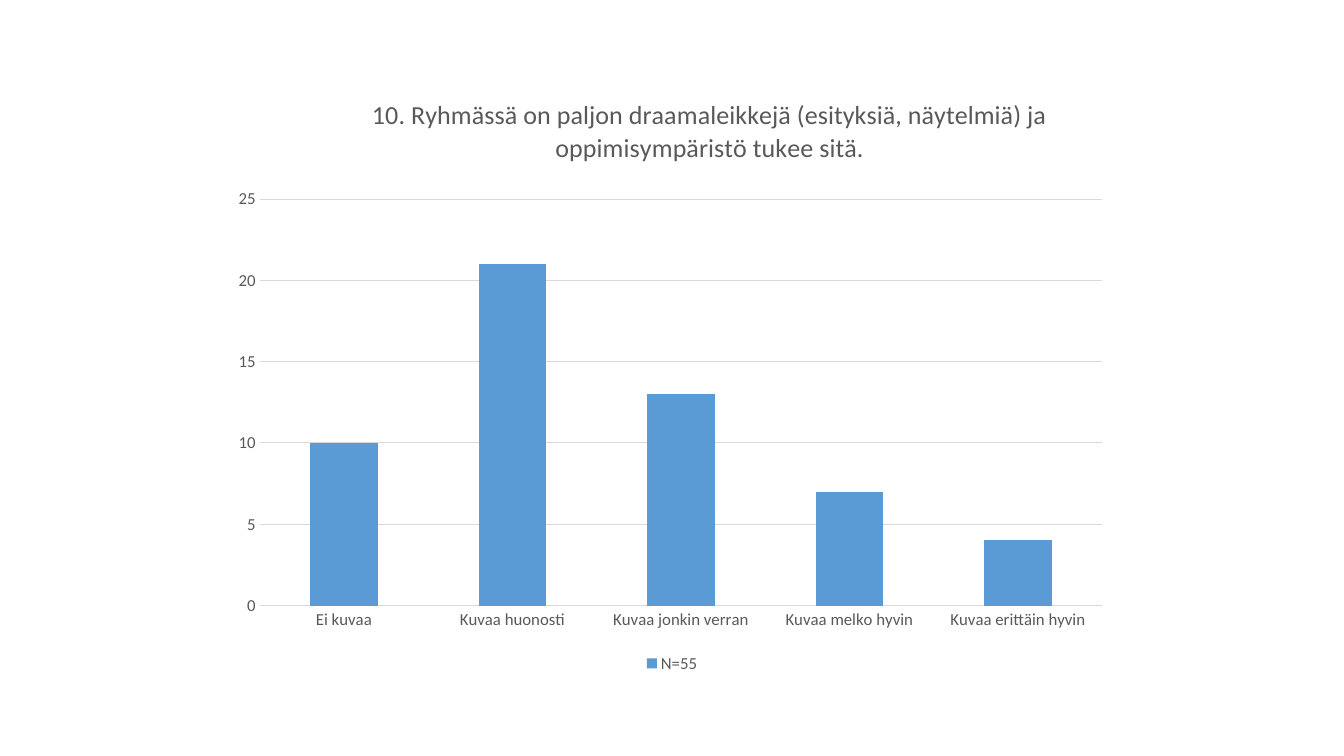
"""Build a slide with one column chart of survey answers."""
from dataclasses import dataclass

from lxml.etree import SubElement
from pptx import Presentation
from pptx.chart.axis import _BaseAxis
from pptx.chart.data import CategoryChartData
from pptx.dml.color import RGBColor
from pptx.dml.line import LineFormat
from pptx.enum.chart import XL_CHART_TYPE, XL_LEGEND_POSITION, XL_TICK_MARK
from pptx.oxml.ns import qn
from pptx.oxml.xmlchemy import BaseOxmlElement
from pptx.text.text import Font
from pptx.util import Inches, Pt

FACE = "Calibri"
GREY = "595959"
RULE = "D9D9D9"
BLUE = "5B9BD5"
TITLE = ("10. Ryhmässä on paljon draamaleikkejä (esityksiä, näytelmiä) ja "
         "oppimisympäristö tukee sitä.")


@dataclass
class Answer:
    label: str
    count: int


ANSWERS = [
    Answer("Ei kuvaa", 10),
    Answer("Kuvaa huonosti", 21),
    Answer("Kuvaa jonkin verran", 13),
    Answer("Kuvaa melko hyvin", 7),
    Answer("Kuvaa erittäin hyvin", 4),
]


def color(code: str) -> RGBColor:
    """Turn a hex string into a colour."""
    return RGBColor.from_string(code)


def style(font: Font, size: float) -> None:
    """Set the face, size and colour of a font."""
    font.name = FACE
    font.size = Pt(size)
    font.bold = False
    font.color.rgb = color(GREY)


def rule(line: LineFormat) -> None:
    """Draw a thin light line."""
    line.color.rgb = color(RULE)
    line.width = Pt(0.75)


def trim(axis: _BaseAxis) -> None:
    """Drop the ticks of an axis and style its labels."""
    axis.major_tick_mark = XL_TICK_MARK.NONE
    axis.minor_tick_mark = XL_TICK_MARK.NONE
    style(axis.tick_labels.font, 12)


def place(part: BaseOxmlElement, index: int, **parts: object) -> None:
    """Give a chart part a manual layout at a child index."""
    for old in part.findall(qn("c:layout")):
        part.remove(old)
    layout = SubElement(part, qn("c:layout"))
    part.insert(index, layout)
    manual = SubElement(layout, qn("c:manualLayout"))
    for name, value in parts.items():
        SubElement(manual, qn(f"c:{name}")).set("val", str(value))


def main() -> None:
    """Build and save the slide."""
    deck = Presentation()
    deck.slide_width, deck.slide_height = Inches(13.33), Inches(7.5)
    slide = deck.slides.add_slide(deck.slide_layouts[6])

    data = CategoryChartData()
    data.categories = [answer.label for answer in ANSWERS]
    data.add_series("N=55", [answer.count for answer in ANSWERS])
    chart = slide.shapes.add_chart(
        XL_CHART_TYPE.COLUMN_STACKED, Inches(2.22), Inches(0.79),
        Inches(8.89), Inches(5.93), data).chart
    style(chart.font, 12)

    chart.has_title = True
    title = chart.chart_title
    run = title.text_frame.paragraphs[0].add_run()
    run.text = TITLE
    style(run.font, 18.6)
    title.include_in_layout = False
    place(title._element, 1, xMode="edge", yMode="edge", x=0.16, y=0.02)

    plot = chart.plots[0]
    plot.gap_width, plot.overlap = 150, 100
    plot.vary_by_categories = False
    fill = plot.series[0].format.fill
    fill.solid()
    fill.fore_color.rgb = color(BLUE)
    place(chart._chartSpace.chart.plotArea, 0, layoutTarget="inner",
          xMode="edge", yMode="edge", x=0.04, y=0.2, w=0.94, h=0.68)

    trim(chart.category_axis)
    rule(chart.category_axis.format.line)
    axis = chart.value_axis
    trim(axis)
    axis.minimum_scale, axis.maximum_scale, axis.major_unit = 0, 25, 5
    axis.format.line.fill.background()
    axis.has_major_gridlines = True
    rule(axis.major_gridlines.format.line)

    chart.has_legend = True
    chart.legend.position = XL_LEGEND_POSITION.BOTTOM
    chart.legend.include_in_layout = False
    style(chart.legend.font, 12)

    deck.save("out.pptx")


if __name__ == "__main__":
    main()
